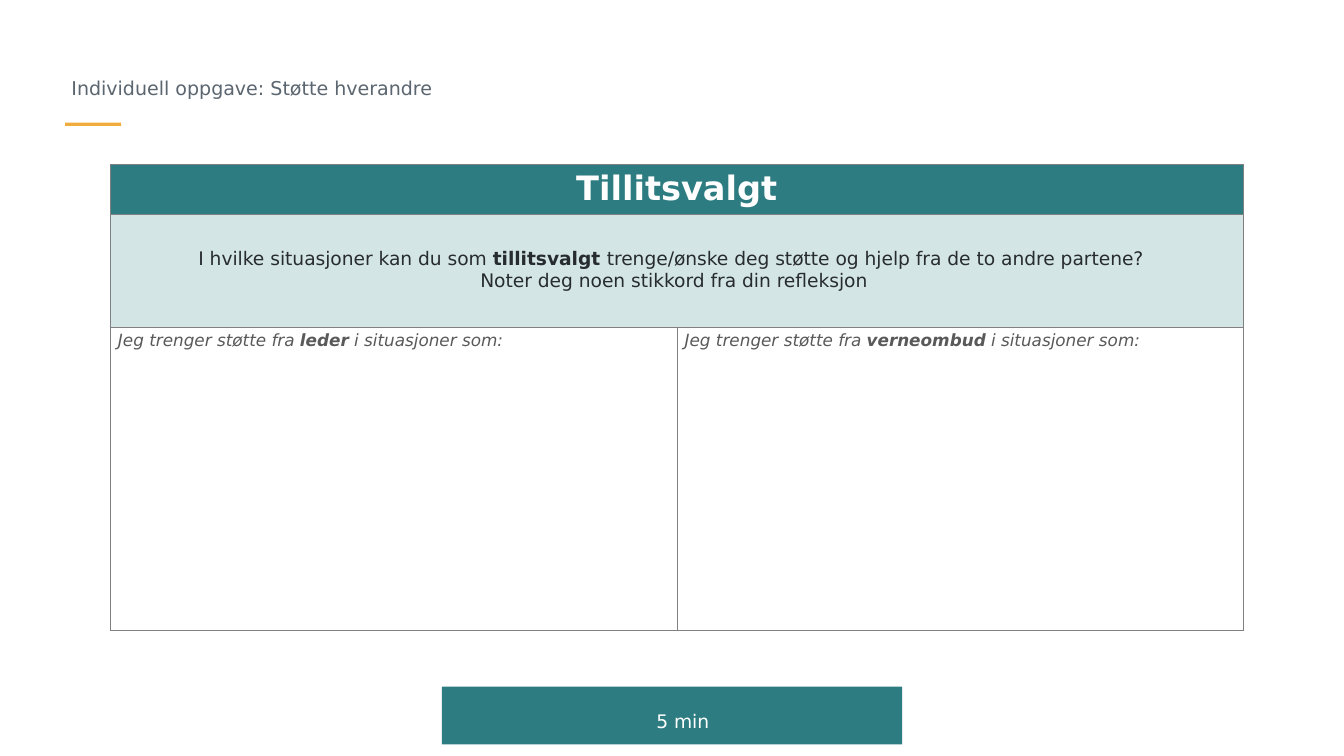
from lxml import etree
from pptx import Presentation
from pptx.dml.color import RGBColor
from pptx.enum import shapes, text
from pptx.oxml import ns
from pptx.util import Cm, Pt

FONT = "DejaVu Sans"
TEAL = RGBColor(0x2D, 0x7C, 0x81)
PALE = RGBColor(0xD4, 0xE5, 0xE6)
WHITE = RGBColor(0xFF, 0xFF, 0xFF)
AMBER = RGBColor(0xF0, 0xAD, 0x3D)
SLATE = RGBColor(0x5B, 0x66, 0x70)
DARK = RGBColor(0x27, 0x2C, 0x31)
GREY = RGBColor(0x59, 0x59, 0x59)
LINE = RGBColor(0x80, 0x80, 0x80)


def style(run, size, color, bold=False, italic=False):
    font = run.font
    font.name, font.size = FONT, Pt(size)
    font.bold, font.italic = bold, italic
    font.color.rgb = color


def inset(item, left, top, right, bottom):
    item.margin_left, item.margin_top = Cm(left), Cm(top)
    item.margin_right, item.margin_bottom = Cm(right), Cm(bottom)


def label(shape, words, size, color, align, anchor, left):
    """Write one line of text, spaced 1.5, inside a shape."""
    frame = shape.text_frame
    frame.text = words
    frame.word_wrap = True
    frame.auto_size = text.MSO_AUTO_SIZE.NONE
    frame.vertical_anchor = anchor
    inset(frame, left, 0.25, 0.25, 0.25)
    para = frame.paragraphs[0]
    para.alignment, para.line_spacing = align, 1.5
    para.space_before = Pt(0)
    style(para.runs[0], size, color)


def add_title(slide, words):
    title = slide.shapes.title
    title.left, title.top = Cm(0.94), Cm(0.66)
    title.width, title.height = Cm(7.95), Cm(1.47)
    label(title, words, 10.2, SLATE, text.PP_ALIGN.LEFT,
          text.MSO_ANCHOR.BOTTOM, 0.41)


def add_bar(slide, left, top, width, height, color):
    bar = slide.shapes.add_shape(shapes.MSO_SHAPE.RECTANGLE,
                                 Cm(left), Cm(top), Cm(width), Cm(height))
    bar.shadow.inherit = False
    bar.fill.solid()
    bar.fill.fore_color.rgb = color
    bar.line.fill.background()
    return bar


def add_edges(cell):
    props = cell._tc.get_or_add_tcPr()
    for index, side in enumerate(("a:lnL", "a:lnR", "a:lnT", "a:lnB")):
        edge = etree.Element(ns.qn(side), w=str(Pt(0.25)))
        fill = etree.SubElement(edge, ns.qn("a:solidFill"))
        etree.SubElement(fill, ns.qn("a:srgbClr"), val=str(LINE))
        props.insert(index, edge)


def fill_cell(cell, lines, size, color, align, anchor, bold=False,
              italic=False):
    """Write lines in a cell; words between asterisks turn bold."""
    inset(cell, 0.15, 0.08, 0.15, 0.08)
    cell.vertical_anchor = anchor
    frame = cell.text_frame
    for row, line in enumerate(lines):
        para = frame.add_paragraph() if row else frame.paragraphs[0]
        para.alignment = align
        for index, part in enumerate(line.split("*")):
            run = para.add_run()
            run.text = part
            style(run, size, color, bold or index % 2 == 1, italic)


def add_grid(slide):
    heights = (0.94, 2.14, 5.74)
    fills = (TEAL, PALE, WHITE)
    grid = slide.shapes.add_table(3, 2, Cm(2.08), Cm(3.1), Cm(21.42),
                                  Cm(sum(heights))).table
    grid.first_row = grid.horz_banding = False
    for row, height, color in zip(grid.rows, heights, fills):
        row.height = Cm(height)
        for cell in row.cells:
            cell.fill.solid()
            cell.fill.fore_color.rgb = color
            add_edges(cell)
    for row in range(2):
        grid.cell(row, 0).merge(grid.cell(row, 1))

    center, middle = text.PP_ALIGN.CENTER, text.MSO_ANCHOR.MIDDLE
    fill_cell(grid.cell(0, 0), ["Tillitsvalgt"], 18, WHITE, center, middle,
              bold=True)
    fill_cell(grid.cell(1, 0), [
        "I hvilke situasjoner kan du som *tillitsvalgt *trenge/ønske deg "
        "støtte og hjelp fra de to andre partene?  ",
        "Noter deg noen stikkord fra din refleksjon ",
    ], 10, DARK, center, middle)
    for col, role in enumerate(("leder", "verneombud")):
        fill_cell(grid.cell(2, col),
                  [f"Jeg trenger støtte fra *{role}* i situasjoner som:"],
                  9, GREY, text.PP_ALIGN.LEFT, text.MSO_ANCHOR.TOP,
                  italic=True)


def main():
    deck = Presentation()
    deck.slide_width, deck.slide_height = Cm(25.4), Cm(14.29)
    slide = deck.slides.add_slide(deck.slide_layouts[5])
    add_bar(slide, 1.23, 2.32, 1.06, 0.06, AMBER)
    timer = add_bar(slide, 8.35, 12.98, 8.7, 1.09, TEAL)
    label(timer, "5 min", 10, WHITE, text.PP_ALIGN.CENTER,
          text.MSO_ANCHOR.MIDDLE, 0.66)
    add_title(slide, "Individuell oppgave: Støtte hverandre")
    add_grid(slide)
    deck.save("out.pptx")


if __name__ == "__main__":
    main()
